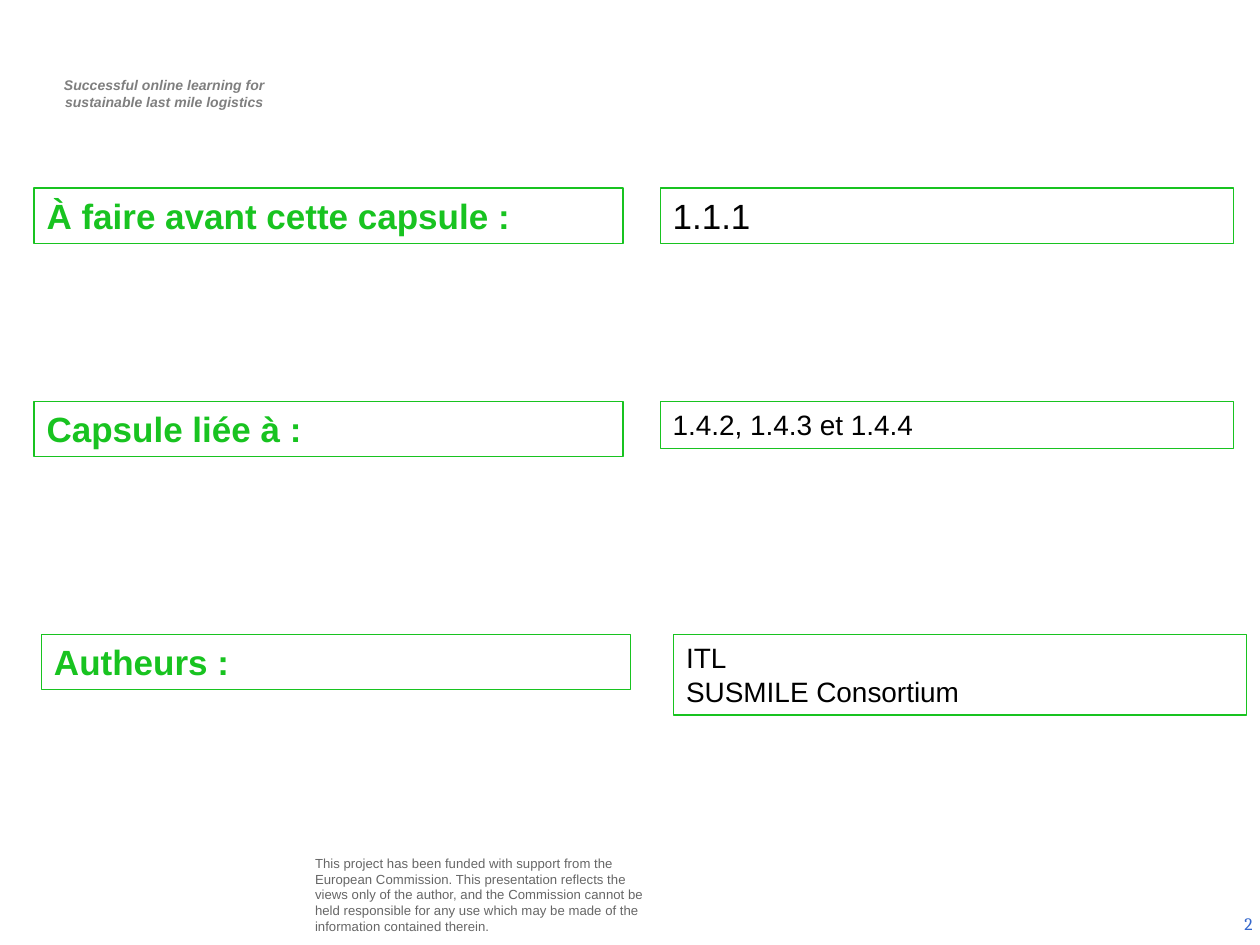
from dataclasses import dataclass

from pptx import Presentation
from pptx.dml.color import RGBColor
from pptx.enum.shapes import MSO_SHAPE
from pptx.enum.text import MSO_ANCHOR, PP_ALIGN
from pptx.slide import Slide
from pptx.text.text import TextFrame
from pptx.util import Pt

COLORS = {
    "green": "18C320",
    "white": "FFFFFF",
    "black": "000000",
    "tagline": "7F7F7F",
    "funding": "666666",
    "number": "3366CC",
}


@dataclass
class Style:
    size: float
    color: str
    bold: bool = False
    italic: bool = False
    font: str = "Arial"
    align: PP_ALIGN = PP_ALIGN.LEFT
    anchor: MSO_ANCHOR = MSO_ANCHOR.TOP
    inset_x: float = 7.2
    inset_y: float = 3.6


@dataclass
class Block:
    left: float
    top: float
    width: float
    height: float
    text: str
    style: Style


@dataclass
class Row:
    top: float
    label_left: float
    label: str
    answer_left: float
    answer_height: float
    answer: str
    answer_style: Style


LABEL = Style(20, "green", bold=True)
LARGE_ANSWER = Style(20, "black")
ANSWER = Style(16, "black")
LABEL_WIDTH, LABEL_HEIGHT, ANSWER_WIDTH = 336.5, 31.5, 327.5

ROWS = [
    Row(107.5, 19.5, "À faire avant cette capsule :", 377.25, 31.5, "1.1.1", LARGE_ANSWER),
    Row(229.5, 19.5, "Capsule liée à :", 377.25, 26.7, "1.4.2, 1.4.3 et 1.4.4", ANSWER),
    Row(362.5, 23.75, "Autheurs :", 385, 46.1, "ITL\nSUSMILE Consortium", ANSWER),
]

NOTICES = [
    Block(20.9, 40.3, 146.2, 26.6,
          "Successful online learning for\nsustainable last mile logistics",
          Style(8, "tagline", bold=True, italic=True, align=PP_ALIGN.CENTER)),
    Block(177.1, 493.2, 202.3, 36,
          "This project has been funded with support from the European Commission. "
          "This presentation reflects the views only of the author, and the Commission "
          "cannot be held responsible for any use which may be made of the information "
          "contained therein.",
          Style(7.5, "funding", anchor=MSO_ANCHOR.MIDDLE, inset_x=2.9, inset_y=2.9)),
    Block(555.1, 513.4, 167.8, 28.8, "2",
          Style(10, "number", font="Cambria", align=PP_ALIGN.RIGHT,
                anchor=MSO_ANCHOR.MIDDLE)),
]


def rgb(name: str) -> RGBColor:
    return RGBColor.from_string(COLORS[name])


def write_text(frame: TextFrame, text: str, style: Style) -> None:
    frame.text = text
    frame.word_wrap = True
    frame.vertical_anchor = style.anchor
    frame.margin_left = frame.margin_right = Pt(style.inset_x)
    frame.margin_top = frame.margin_bottom = Pt(style.inset_y)
    for paragraph in frame.paragraphs:
        paragraph.alignment = style.align
        for run in paragraph.runs:
            run.font.name = style.font
            run.font.size = Pt(style.size)
            run.font.bold = style.bold
            run.font.italic = style.italic
            run.font.color.rgb = rgb(style.color)


def add_notice(slide: Slide, block: Block) -> None:
    notice = slide.shapes.add_textbox(
        Pt(block.left), Pt(block.top), Pt(block.width), Pt(block.height))
    write_text(notice.text_frame, block.text, block.style)


def add_framed_block(slide: Slide, block: Block) -> None:
    """Draw a white rectangle with a thin green outline around the text."""
    frame = slide.shapes.add_shape(
        MSO_SHAPE.RECTANGLE,
        Pt(block.left), Pt(block.top), Pt(block.width), Pt(block.height))
    frame.shadow.inherit = False
    frame.fill.solid()
    frame.fill.fore_color.rgb = rgb("white")
    frame.line.color.rgb = rgb("green")
    frame.line.width = Pt(0.75)
    write_text(frame.text_frame, block.text, block.style)


def add_row(slide: Slide, row: Row) -> None:
    add_framed_block(slide, Block(row.label_left, row.top, LABEL_WIDTH, LABEL_HEIGHT,
                                  row.label, LABEL))
    add_framed_block(slide, Block(row.answer_left, row.top, ANSWER_WIDTH,
                                  row.answer_height, row.answer, row.answer_style))


def main() -> None:
    presentation = Presentation()
    presentation.slide_width = Pt(720)
    presentation.slide_height = Pt(540)
    slide = presentation.slides.add_slide(presentation.slide_layouts[6])
    for notice in NOTICES:
        add_notice(slide, notice)
    for row in ROWS:
        add_row(slide, row)
    presentation.save("out.pptx")


if __name__ == "__main__":
    main()
